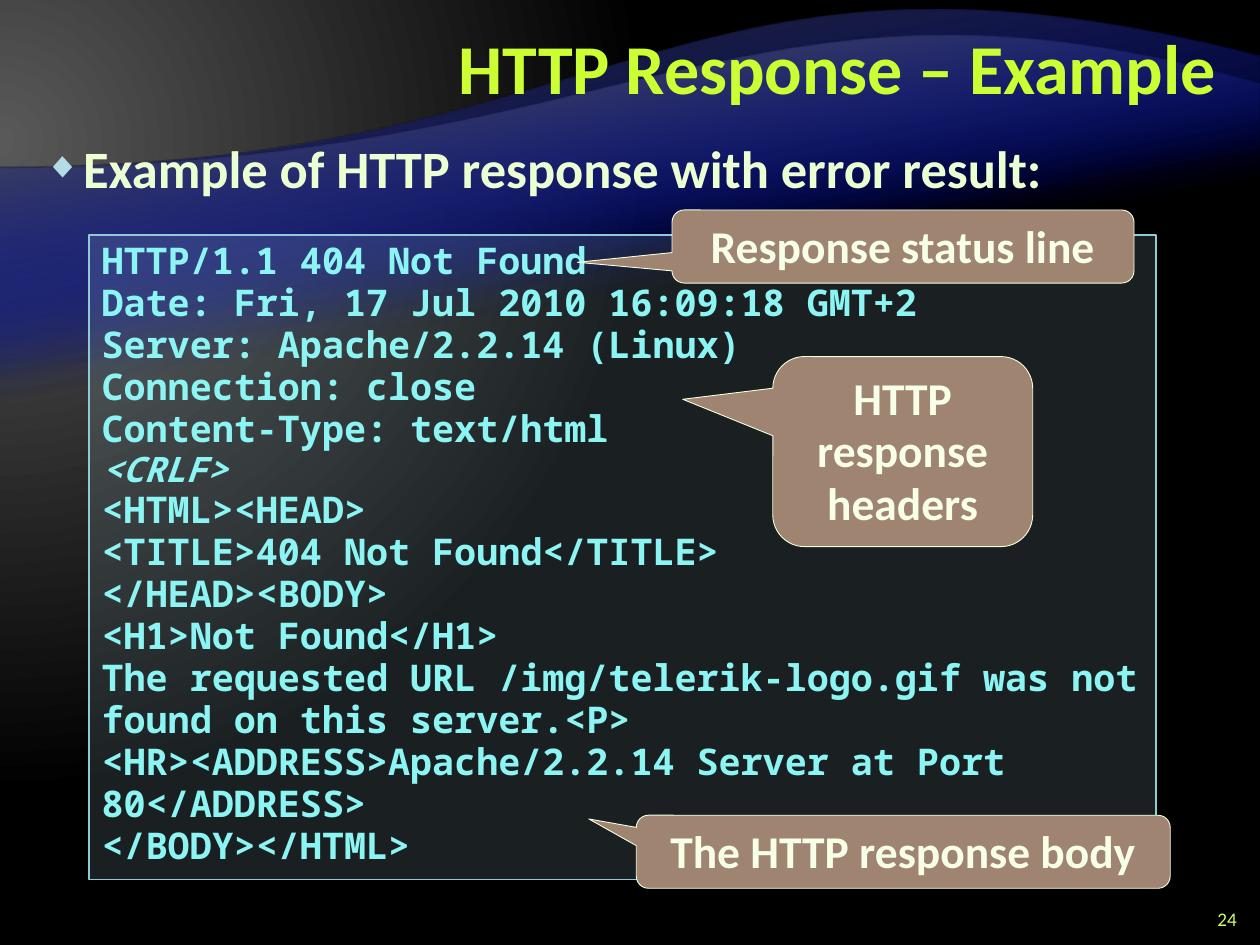
from lxml.etree import SubElement
from pptx import Presentation
from pptx.dml.color import RGBColor
from pptx.enum.shapes import MSO_SHAPE as Shape
from pptx.enum.text import MSO_ANCHOR as Anchor, MSO_AUTO_SIZE as AutoSize, PP_ALIGN as Align
from pptx.oxml.ns import qn
from pptx.util import Inches, Pt

UNIT = Inches(1) / 12
COLUMNS, ROWS = 120, 90

LIME = RGBColor(0xCC, 0xFF, 0x33)
NUMBER_GREEN = RGBColor(0xCC, 0xFF, 0x66)
PALE_GREEN = RGBColor(0xEB, 0xFF, 0xD2)
ICE = RGBColor(0xB5, 0xDB, 0xE5)
CODE_BORDER = RGBColor(0x90, 0xCA, 0xD7)
CODE_CYAN = RGBColor(0x8C, 0xF4, 0xF2)
BROWN = RGBColor(0x9F, 0x84, 0x71)
CREAM_LINE = RGBColor(0xF5, 0xFF, 0xE0)
CREAM = RGBColor(0xF7, 0xFF, 0xE7)
BLUE = RGBColor(0x00, 0x0D, 0x9E)
DARK_GRAY = RGBColor(0x26, 0x26, 0x26)
GRAY = RGBColor(0x59, 0x59, 0x59)
BLACK = RGBColor(0, 0, 0)

CODE_LINES = [
    "HTTP/1.1 404 Not Found",
    "Date: Fri, 17 Jul 2010 16:09:18 GMT+2",
    "Server: Apache/2.2.14 (Linux)",
    "Connection: close",
    "Content-Type: text/html",
    "<CRLF>",
    "<HTML><HEAD>",
    "<TITLE>404 Not Found</TITLE>",
    "</HEAD><BODY>",
    "<H1>Not Found</H1>",
    "The requested URL /img/telerik-logo.gif was not found on this server.<P>",
    "<HR><ADDRESS>Apache/2.2.14 Server at Port 80</ADDRESS>",
    "</BODY></HTML>",
]
CALLOUTS = [
    ("Response status line", (64, 20, 44, 6.96), (-0.705, 0.216)),
    ("HTTP response headers", (73.6, 33.96, 24.75, 18.1), (-0.847, -0.275)),
    ("The HTTP response body", (60.6, 77.64, 50.85, 6.96), (-0.589, -0.449)),
]


def grid(*cells):
    """Turn grid cells into slide lengths."""
    return [round(cell * UNIT) for cell in cells]


def add_color(parent, color, alpha=None):
    """Add a colour element, with an opacity in percent if given."""
    element = SubElement(parent, qn("a:srgbClr"), val=str(color))
    if alpha is not None:
        SubElement(element, qn("a:alpha"), val=str(alpha * 1000))


def set_gradient(owner, fill, stops, angle=None, focus=None):
    """Fill with a linear gradient, or a circular one around a focus."""
    fill.gradient()
    gradient = owner.element.xpath(".//a:gradFill")[0]
    for child in list(gradient):
        gradient.remove(child)
    stop_list = SubElement(gradient, qn("a:gsLst"))
    for position, color, alpha in stops:
        stop = SubElement(stop_list, qn("a:gs"), pos=str(position * 1000))
        add_color(stop, color, alpha)
    if focus:
        circle = SubElement(gradient, qn("a:path"), path="circle")
        sides = {side: str(share * 1000) for side, share in zip("ltrb", focus)}
        SubElement(circle, qn("a:fillToRect"), **sides)
    else:
        SubElement(gradient, qn("a:lin"), ang=str(angle * 60000), scaled="0")


def add_wave(slide, crest, top, bottom, color):
    """Draw a half-turned band with one curved edge that fades away from it."""
    def turn(column, row):
        return grid(COLUMNS - column, top + bottom - row)

    builder = slide.shapes.build_freeform(*turn(0, 16))
    builder.add_line_segments([turn(COLUMNS, top), turn(COLUMNS, bottom), turn(0, bottom)])
    wave = builder.convert_to_shape()
    edge = wave.element.xpath(".//a:lnTo")[0]
    curve = edge.makeelement(qn("a:cubicBezTo"))
    for point in ((60, 16), crest, (COLUMNS, top)):
        x, y = turn(*point)
        SubElement(curve, qn("a:pt"), x=str(x - wave.left), y=str(y - wave.top))
    edge.getparent().replace(edge, curve)
    wave.rotation = 180
    wave.shadow.inherit = False
    wave.line.fill.background()
    set_gradient(wave, wave.fill, [(65, BLUE, 0), (100, color, 100)], angle=80)


def write_text(shape, *lines, size, color, font="Calibri", bold=True, align=Align.LEFT,
               spacing=None, around=Pt(0), anchor=Anchor.TOP, fit=AutoSize.NONE):
    """Write one paragraph per line and return the paragraphs."""
    frame = shape.text_frame
    frame.word_wrap, frame.auto_size, frame.vertical_anchor = True, fit, anchor
    for index, line in enumerate(lines):
        paragraph = frame.add_paragraph() if index else frame.paragraphs[0]
        paragraph.alignment = align
        paragraph.line_spacing = spacing
        paragraph.space_before = paragraph.space_after = around
        run = paragraph.add_run()
        run.text = line
        run.font.name, run.font.size, run.font.bold = font, Pt(size), bold
        run.font.color.rgb = color
    return frame.paragraphs


def place(shape, *cells):
    """Move a placeholder to its grid cells."""
    shape.left, shape.top, shape.width, shape.height = grid(*cells)
    return shape


def add_bullet(paragraph):
    """Give a paragraph a small diamond bullet with a hanging indent."""
    properties = paragraph._p.get_or_add_pPr()
    indent = Inches(0.31)
    properties.set("marL", str(indent))
    properties.set("indent", str(-indent))
    add_color(SubElement(properties, qn("a:buClr")), ICE)
    SubElement(properties, qn("a:buSzPct"), val="70000")
    SubElement(properties, qn("a:buChar"), char="◆")
    tabs = SubElement(properties, qn("a:tabLst"))
    SubElement(tabs, qn("a:tab"), pos=str(indent), algn="l")


def add_panel(slide, kind, cells, fill, line, width):
    """Add a flat filled shape with a thin border."""
    panel = slide.shapes.add_shape(kind, *grid(*cells))
    panel.shadow.inherit = False
    panel.fill.solid()
    panel.fill.fore_color.rgb = fill
    panel.line.color.rgb = line
    panel.line.width = Pt(width)
    return panel


def add_code(slide):
    """Add the translucent box with the response listing."""
    panel = add_panel(slide, Shape.RECTANGLE, (8.5, 22.36, 101.6, 61.4), ICE, CODE_BORDER, 1)
    color = panel.element.spPr.find(qn("a:solidFill")).find(qn("a:srgbClr"))
    SubElement(color, qn("a:alpha"), val="15000")
    paragraphs = write_text(panel, *CODE_LINES, size=21, color=CODE_CYAN,
                            font="Noto Sans Mono", spacing=0.95, fit=AutoSize.SHAPE_TO_FIT_TEXT)
    separator = paragraphs[CODE_LINES.index("<CRLF>")].runs[0].font
    separator.size, separator.italic = Pt(20), True


def add_callout(slide, text, cells, tip):
    """Add a rounded callout whose tip points at part of the listing."""
    callout = add_panel(slide, Shape.ROUNDED_RECTANGULAR_CALLOUT, cells, BROWN, CREAM_LINE, 0.5)
    callout.adjustments[0], callout.adjustments[1] = tip
    write_text(callout, text, size=26, color=CREAM, align=Align.CENTER, spacing=Pt(30),
               fit=AutoSize.SHAPE_TO_FIT_TEXT)


def main():
    """Build the slide and save it."""
    presentation = Presentation()
    presentation.slide_width, presentation.slide_height = grid(COLUMNS, ROWS)
    slide = presentation.slides.add_slide(presentation.slide_layouts[1])
    title, body = slide.placeholders
    set_gradient(slide, slide.background.fill, [(0, GRAY, None), (83, BLACK, None)],
                 focus=(20, 30, 135, 100))
    for _ in range(2):
        add_wave(slide, (64.1, -9), 5.4, 78.4, DARK_GRAY)
        add_wave(slide, (71.8, -5.9), 8, 66.8, GRAY)
    write_text(place(title, 24, 1, 93, 12), "HTTP Response – Example", size=40, color=LIME,
               align=Align.RIGHT, spacing=Pt(40), anchor=Anchor.MIDDLE)
    slide.shapes._spTree.append(title.element)
    number = slide.shapes.add_textbox(*grid(113, 86, 6, 3))
    write_text(number, "24", size=11, color=NUMBER_GREEN, bold=False, align=Align.RIGHT,
               anchor=Anchor.MIDDLE)
    add_code(slide)
    lead = write_text(place(body, 3, 12, 114, 8), "Example of HTTP response with error result:",
                      size=30, color=PALE_GREEN, spacing=Pt(38), around=Pt(6))[0]
    lead.space_before = Pt(0)
    add_bullet(lead)
    slide.shapes._spTree.append(body.element)
    for callout in CALLOUTS:
        add_callout(slide, *callout)
    presentation.save("out.pptx")


if __name__ == "__main__":
    main()
